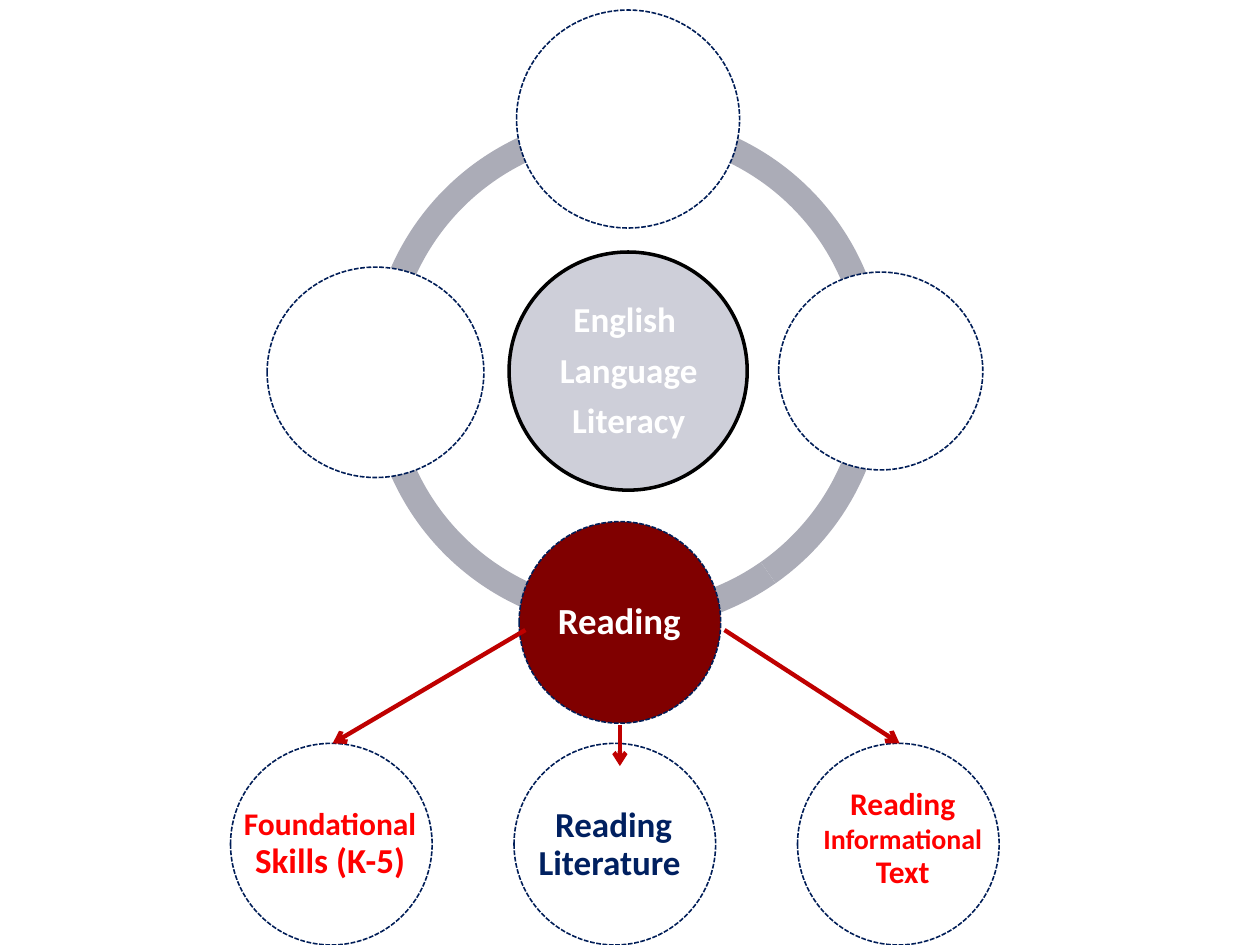
from dataclasses import dataclass

from pptx import Presentation
from pptx.dml.color import RGBColor
from pptx.enum.dml import MSO_LINE_DASH_STYLE as Dash
from pptx.enum.shapes import MSO_CONNECTOR_TYPE as Connector
from pptx.enum.shapes import MSO_SHAPE as Shape
from pptx.enum.text import MSO_ANCHOR as Anchor
from pptx.enum.text import PP_ALIGN as Align
from pptx.oxml.ns import qn
from pptx.oxml.xmlchemy import OxmlElement
from pptx.util import Inches, Pt


@dataclass(frozen=True)
class Theme:
    """Colours, font and type sizes of the diagram."""

    white: str = "FFFFFF"
    black: str = "000000"
    ring: str = "ABACB7"
    hub: str = "CECFD9"
    outline: str = "001D57"
    navy: str = "002060"
    maroon: str = "800000"
    red: str = "FF0000"
    arrow: str = "BF0000"
    font: str = "Calibri"
    focus: int = 21
    large: int = 20
    medium: int = 18
    small: int = 16


class DiagramSlide:
    """Draws diagram elements on a slide divided into 10 columns and 7.5 rows."""

    def __init__(self, presentation, theme):
        self.theme = theme
        self.slide = presentation.slides.add_slide(presentation.slide_layouts[6])
        self.column = presentation.slide_width / 10
        self.row = presentation.slide_height / 7.5

    def place(self, *lengths):
        """Turn alternating columns and rows into slide lengths."""
        units = (self.column, self.row) * 2
        return [int(length * unit) for length, unit in zip(lengths, units)]

    def solid(self, kind, box, color):
        """Add a filled preset shape without outline."""
        shape = self.slide.shapes.add_shape(kind, *self.place(*box))
        shape.shadow.inherit = False
        shape.fill.solid()
        shape.fill.fore_color.rgb = RGBColor.from_string(color)
        shape.line.fill.background()
        return shape

    def arc(self, box, start, end, thickness):
        """Add one ring segment between two angles in degrees."""
        shape = self.solid(Shape.BLOCK_ARC, box, self.theme.ring)
        for index, value in enumerate((start * 0.6, end * 0.6, thickness)):
            shape.adjustments[index] = value

    def circle(self, box, fill, line, width, dash=None):
        """Add an outlined circle."""
        shape = self.solid(Shape.OVAL, box, fill)
        shape.line.color.rgb = RGBColor.from_string(line)
        shape.line.width = Pt(width)
        shape.line.dash_style = dash

    def node(self, box, fill):
        """Add a circle with the dashed outline of a topic."""
        self.circle(box, fill, self.theme.outline, 0.9, Dash.SQUARE_DOT)

    def label(self, box, color, paragraphs, inset=0.03):
        """Add centred bold text given as paragraphs of (text, size) runs."""
        frame = self.slide.shapes.add_textbox(*self.place(*box)).text_frame
        frame.word_wrap = True
        frame.vertical_anchor = Anchor.MIDDLE
        frame.margin_left = frame.margin_right = Inches(inset)
        frame.margin_top = frame.margin_bottom = Inches(inset)
        for index, runs in enumerate(paragraphs):
            paragraph = frame.add_paragraph() if index else frame.paragraphs[0]
            paragraph.alignment = Align.CENTER
            paragraph.line_spacing = 0.9
            paragraph.space_after = Pt(7)
            for text, size in runs:
                run = paragraph.add_run()
                run.text = text
                run.font.name = self.theme.font
                run.font.size = Pt(size)
                run.font.bold = True
                run.font.color.rgb = RGBColor.from_string(color)

    def arrow(self, start, end):
        """Add a straight arrow between two grid points."""
        connector = self.slide.shapes.add_connector(
            Connector.STRAIGHT, *self.place(*start, *end)
        )
        connector.line.color.rgb = RGBColor.from_string(self.theme.arrow)
        connector.line.width = Pt(2.5)
        properties = connector.element.spPr
        tail = OxmlElement("a:tailEnd")
        tail.set("type", "arrow")
        properties.find(qn("a:ln")).append(tail)
        properties.append(OxmlElement("a:effectLst"))


def main():
    """Build the literacy diagram."""
    presentation = Presentation()
    presentation.slide_width, presentation.slide_height = Inches(10), Inches(7.5)
    theme = Theme()
    diagram = DiagramSlide(presentation, theme)

    for start, end in ((108, 162), (55, 108), (0, 55), (162, 0)):
        diagram.arc((2.93, 0.9, 4.1, 4.1), start, end, 0.05)

    diagram.circle((4.04, 2, 1.89, 1.89), theme.hub, theme.black, 2)
    hub_words = ("English ", "Language", "Literacy")
    diagram.label(
        (4.32, 2.28, 1.34, 1.34),
        theme.white,
        [[(word, theme.large)] for word in hub_words],
    )

    for box in (
        (4.1, 0.08, 1.77, 1.73),
        (6.18, 2.16, 1.62, 1.57),
        (2.12, 2.12, 1.72, 1.67),
    ):
        diagram.node(box, theme.white)
    diagram.node((4.12, 4.14, 1.6, 1.6), theme.maroon)
    diagram.label(
        (4.35, 4.38, 1.13, 1.13), theme.white, [[("Reading", theme.focus)]], inset=0
    )

    strands = (
        ((1.83, 6.13, 1.58, 1.13), theme.red,
         [("Foundational", theme.medium), (" Skills (K-5)", theme.large)]),
        ((4.08, 5.92, 1.58, 1.58), theme.navy,
         [("Reading Literature ", theme.large)]),
        ((6.33, 5.83, 1.67, 1.67), theme.red,
         [("Reading ", theme.medium), ("Informational", theme.small),
          (" Text", theme.medium)]),
    )
    for index, (box, color, runs) in enumerate(strands):
        diagram.node((1.83 + 2.25 * index, 5.9, 1.6, 1.6), theme.white)
        diagram.label(box, color, [runs])

    for start, end in (
        ((4.17, 5), (2.64, 5.9)),
        ((5.75, 5), (7.14, 5.9)),
        ((4.92, 5.75), (4.92, 6.08)),
    ):
        diagram.arrow(start, end)

    presentation.save("out.pptx")


if __name__ == "__main__":
    main()
